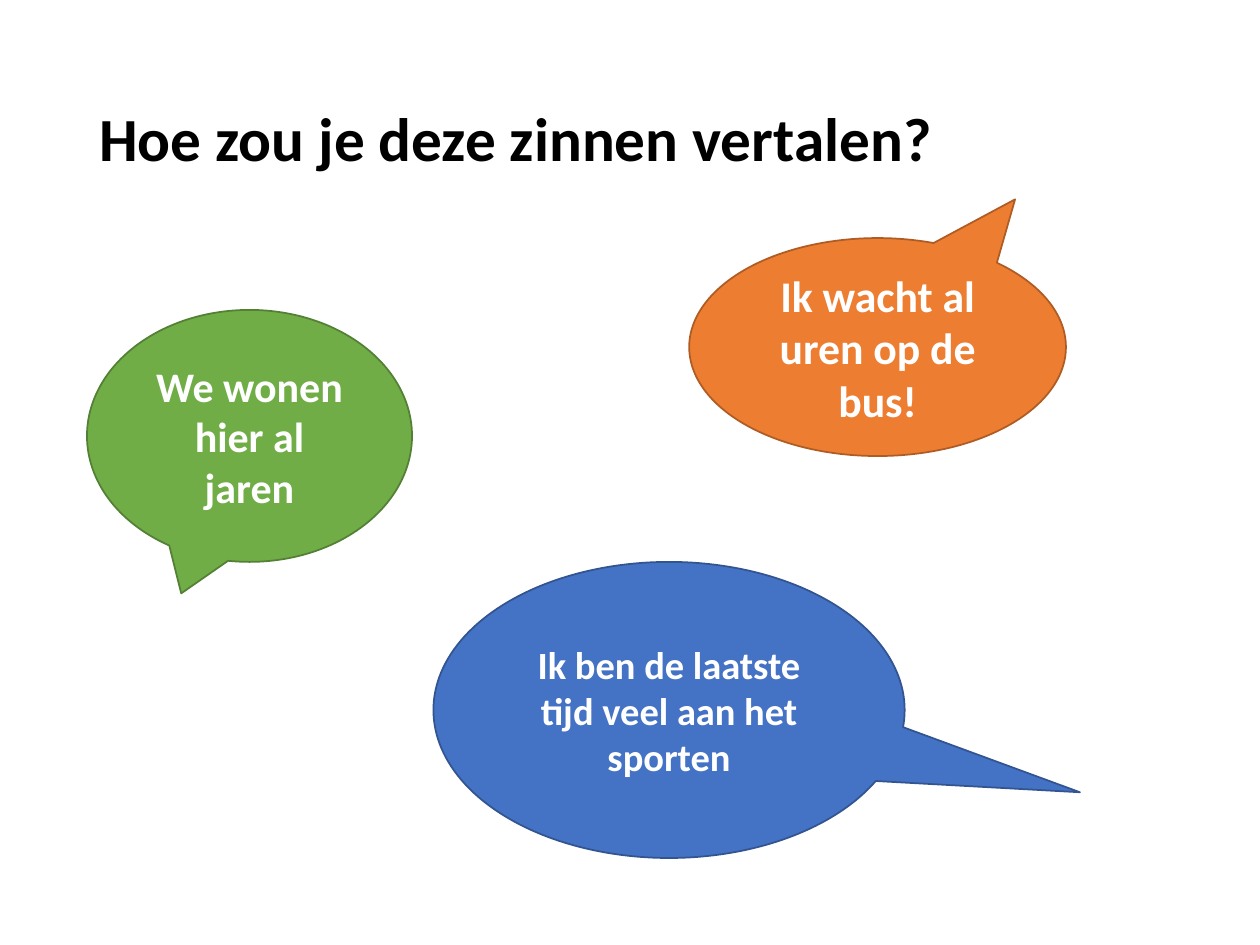
import pptx
import pptx.util
import pptx.dml.color
import pptx.enum.shapes
import pptx.enum.text

Inches = pptx.util.Inches
FONT = "Calibri"


def color(hex_code):
    return pptx.dml.color.RGBColor.from_string(hex_code)


def write_text(frame, text, size, hex_code, align):
    frame.word_wrap = True
    frame.vertical_anchor = pptx.enum.text.MSO_ANCHOR.MIDDLE
    paragraph = frame.paragraphs[0]
    paragraph.alignment = align
    run = paragraph.add_run()
    run.text = text
    run.font.name = FONT
    run.font.size = pptx.util.Pt(size)
    run.font.bold = True
    run.font.color.rgb = color(hex_code)
    return paragraph


def add_title(slide, box, text):
    title = slide.shapes.add_textbox(*map(Inches, box))
    paragraph = write_text(title.text_frame, text, 35, "000000",
                           pptx.enum.text.PP_ALIGN.LEFT)
    paragraph.line_spacing = 0.9


def add_bubble(slide, box, tip, fill, outline, text, size):
    """Speech bubble; tip is the pointer's offset from the centre, as a share of the box."""
    bubble = slide.shapes.add_shape(
        pptx.enum.shapes.MSO_SHAPE.OVAL_CALLOUT, *map(Inches, box))
    bubble.shadow.inherit = False
    bubble.adjustments[0], bubble.adjustments[1] = tip
    bubble.fill.solid()
    bubble.fill.fore_color.rgb = color(fill)
    bubble.line.color.rgb = color(outline)
    bubble.line.width = pptx.util.Pt(1)
    write_text(bubble.text_frame, text, size, "FFFFFF",
               pptx.enum.text.PP_ALIGN.CENTER)


def main():
    deck = pptx.Presentation()
    deck.slide_width, deck.slide_height = Inches(10), Inches(7.5)
    slide = deck.slides.add_slide(deck.slide_layouts[6])

    # Question
    add_title(slide, (0.69, 0.4, 8.62, 1.45), "Hoe zou je deze zinnen vertalen?")

    # Sentences to translate: box, tip, fill, outline, text, size
    sentences = [
        ((5.47, 1.89, 2.99, 1.73), (0.365, -0.678), "ED7D31", "AF5C24",
         "Ik wacht al uren op de bus!", 25),
        ((0.69, 2.46, 2.58, 2), (-0.21, 0.625), "70AD47", "538035",
         "We wonen hier al jaren", 24),
        ((3.44, 4.46, 3.74, 2.35), (0.872, 0.278), "4472C4", "325491",
         "Ik ben de laatste tijd veel aan het sporten", 22),
    ]
    for sentence in sentences:
        add_bubble(slide, *sentence)

    deck.save("out.pptx")


if __name__ == "__main__":
    main()
